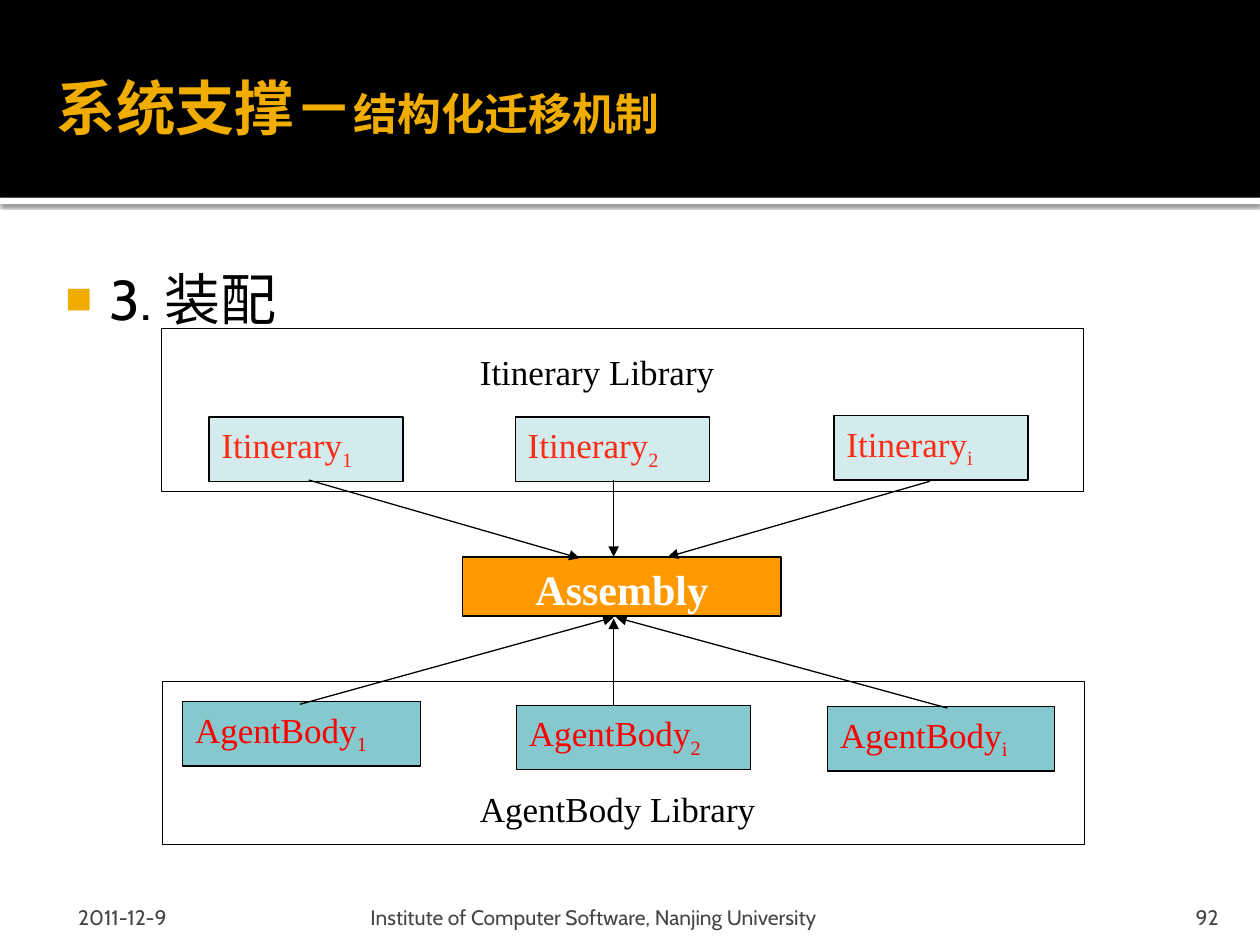
from lxml.etree import SubElement
from pptx import Presentation
from pptx.dml.color import RGBColor
from pptx.enum.shapes import MSO_CONNECTOR, MSO_SHAPE
from pptx.enum.text import MSO_ANCHOR, MSO_AUTO_SIZE, PP_ALIGN
from pptx.oxml import parse_xml
from pptx.oxml.ns import nsdecls, qn
from pptx.util import Inches, Pt

SERIF = "Times New Roman"
SANS = "Cabin"
BLACK, WHITE, GOLD, GREY = "000000", "FFFFFF", "F0AD00", "454545"
DEFAULT_INSETS = (0.1, 0.05, 0.1, 0.05)


def paint(color_format, color):
    """Set a fill's or font's colour from a hex string."""
    if hasattr(color_format, "solid"):
        color_format.solid()
        color_format = color_format.fore_color
    color_format.rgb = RGBColor.from_string(color)


def add_run(paragraph, text, size, font, color, bold=False, baseline=None):
    """Append one formatted run."""
    run = paragraph.add_run()
    run.text = text
    run.font.size = Pt(size)
    run.font.name = font
    run.font.bold = bold
    paint(run.font.color, color)
    if baseline:
        run.font._element.set("baseline", str(baseline * 1000))


def set_frame(shape, align, anchor=MSO_ANCHOR.TOP, insets=DEFAULT_INSETS):
    """Set up a text frame and return its first paragraph."""
    frame = shape.text_frame
    frame.auto_size = MSO_AUTO_SIZE.NONE
    frame.word_wrap = True
    frame.vertical_anchor = anchor
    (frame.margin_left, frame.margin_top,
     frame.margin_right, frame.margin_bottom) = map(Inches, insets)
    paragraph = frame.paragraphs[0]
    paragraph.alignment = align
    return paragraph


def place(shape, box):
    """Move a placeholder to left, top, width, height."""
    shape.left, shape.top, shape.width, shape.height = map(Inches, box)


def add_box(slide, box, fill=None, line=BLACK):
    """Add a rectangle with an optional fill and outline."""
    rectangle = slide.shapes.add_shape(MSO_SHAPE.RECTANGLE, *map(Inches, box))
    rectangle.shadow.inherit = False
    if fill:
        paint(rectangle.fill, fill)
    else:
        rectangle.fill.background()
    if line:
        paint(rectangle.line.fill, line)
        rectangle.line.width = Pt(0.75)
    else:
        rectangle.line.fill.background()
    return rectangle


def add_component(slide, box, fill, name, index, color):
    """Add a filled box labelled with a name and a subscript."""
    paragraph = set_frame(add_box(slide, box, fill), PP_ALIGN.JUSTIFY)
    add_run(paragraph, name, 20, SERIF, color)
    add_run(paragraph, index, 20, SERIF, color, baseline=-25)


def add_label(slide, box, text, size, font, color, align,
              anchor=MSO_ANCHOR.TOP, insets=DEFAULT_INSETS):
    """Add a one-line text box."""
    label = slide.shapes.add_textbox(*map(Inches, box))
    add_run(set_frame(label, align, anchor, insets), text, size, font, color)


def add_arrow(slide, start, end):
    """Add a thin black arrow pointing at its end."""
    arrow = slide.shapes.add_connector(
        MSO_CONNECTOR.STRAIGHT, *map(Inches, start + end))
    paint(arrow.line.fill, BLACK)
    arrow.line.width = Pt(0.75)
    SubElement(arrow.line._get_or_add_ln(), qn("a:tailEnd"), type="triangle")
    SubElement(arrow._element.spPr, qn("a:effectLst"))


def add_header(slide):
    """Lay the black header and its shadowed white edge behind the title."""
    header = add_box(slide, (0, 0, 10, 1.57), BLACK, None)
    edge = add_box(slide, (0, 1.57, 10, 0.05), WHITE, None)
    effects = edge._element.spPr.find(qn("a:effectLst"))
    effects.append(parse_xml(
        f'<a:outerShdw {nsdecls("a")} blurRad="{Pt(2.5)}" dist="{Pt(0.8)}" '
        'dir="5400000" algn="tl" rotWithShape="0"><a:srgbClr val="000000">'
        '<a:alpha val="60000"/></a:srgbClr></a:outerShdw>'))
    for band in (header, edge):
        band._element.getparent().insert(2, band._element)


def fill_title(title):
    """Write the two-size title."""
    place(title, (0.35, 0.06, 9.45, 1.57))
    paragraph = set_frame(title, PP_ALIGN.LEFT, MSO_ANCHOR.MIDDLE,
                          (0.1, 0.05, 0.05, 0.05))
    add_run(paragraph, "系统支撑－", 34, SANS, GOLD, bold=True)
    add_run(paragraph, "结构化迁移机制", 25, SANS, GOLD, bold=True)


def fill_body(body):
    """Write the bulleted heading."""
    place(body, (0.33, 2, 9.33, 4.92))
    paragraph = set_frame(body, PP_ALIGN.LEFT, insets=(0.06, 0.1, 0.1, 0.05))
    paragraph.space_before = Pt(0)
    properties = paragraph._p.get_or_add_pPr()
    properties.set("marL", str(Inches(0.48)))
    properties.set("indent", str(Inches(-0.35)))
    color = SubElement(properties, qn("a:buClr"))
    SubElement(color, qn("a:srgbClr"), val=GOLD)
    SubElement(properties, qn("a:buSzPct"), val="80000")
    SubElement(properties, qn("a:buChar"), char="■")
    add_run(paragraph, "3. 装配", 32, SANS, BLACK)


def add_libraries(slide):
    """Add both libraries with their components, and the assembly between."""
    libraries = [
        ((1.28, 2.61), (3.71, 2.73, 2.41, 0.47), "Itinerary", "D3EBED", "FD2B15",
         [(1.66, 3.31, 1.54), (4.09, 3.31, 1.54), (6.62, 3.3, 1.54)]),
        ((1.29, 5.41), (3.71, 6.2, 3.15, 0.47), "AgentBody", "85C8CD", "FF0000",
         [(1.45, 5.57, 1.89), (4.1, 5.6, 1.86), (6.57, 5.61, 1.8)]),
    ]
    for corner, label_box, name, fill, color, components in libraries:
        add_box(slide, corner + (7.32, 1.29))
        for component, index in zip(components, "12i"):
            add_component(slide, component + (0.51,), fill, name, index, color)
        add_label(slide, label_box, f"{name} Library", 20, SERIF, BLACK,
                  PP_ALIGN.JUSTIFY)
    assembly = add_box(slide, (3.67, 4.42, 2.53, 0.47), "FF9900")
    add_run(set_frame(assembly, PP_ALIGN.CENTER), "Assembly", 24, SERIF, WHITE,
            bold=True)


def add_footer(slide):
    """Add the date, institute and slide number."""
    entries = [
        (0.5, 2.33, "2011-12-9", PP_ALIGN.LEFT, 0.12, 0.05),
        (2.89, 6.02, "Institute of Computer Software, Nanjing University",
         PP_ALIGN.LEFT, 0.05, 0.05),
        (8.97, 0.8, "92", PP_ALIGN.RIGHT, 0.1, 0.1),
    ]
    for left, width, text, align, inset_left, inset_right in entries:
        add_label(slide, (left, 7.08, width, 0.3), text, 12, SANS, GREY, align,
                  MSO_ANCHOR.BOTTOM, (inset_left, 0.05, inset_right, 0))


def main():
    """Build and save the slide."""
    presentation = Presentation()
    presentation.slide_width, presentation.slide_height = Inches(10), Inches(7.5)
    slide = presentation.slides.add_slide(presentation.slide_layouts[1])
    add_header(slide)
    fill_title(slide.shapes.title)
    fill_body(slide.placeholders[1])
    add_libraries(slide)
    for start, end in [
        ((2.45, 3.81), (4.6, 4.43)),
        ((4.87, 3.81), (4.87, 4.42)),
        ((7.38, 3.82), (5.3, 4.42)),
        ((2.38, 5.59), (4.87, 4.9)),
        ((4.87, 5.6), (4.87, 4.91)),
        ((7.52, 5.62), (4.89, 4.9)),
    ]:
        add_arrow(slide, start, end)
    add_footer(slide)
    presentation.save("out.pptx")


if __name__ == "__main__":
    main()
